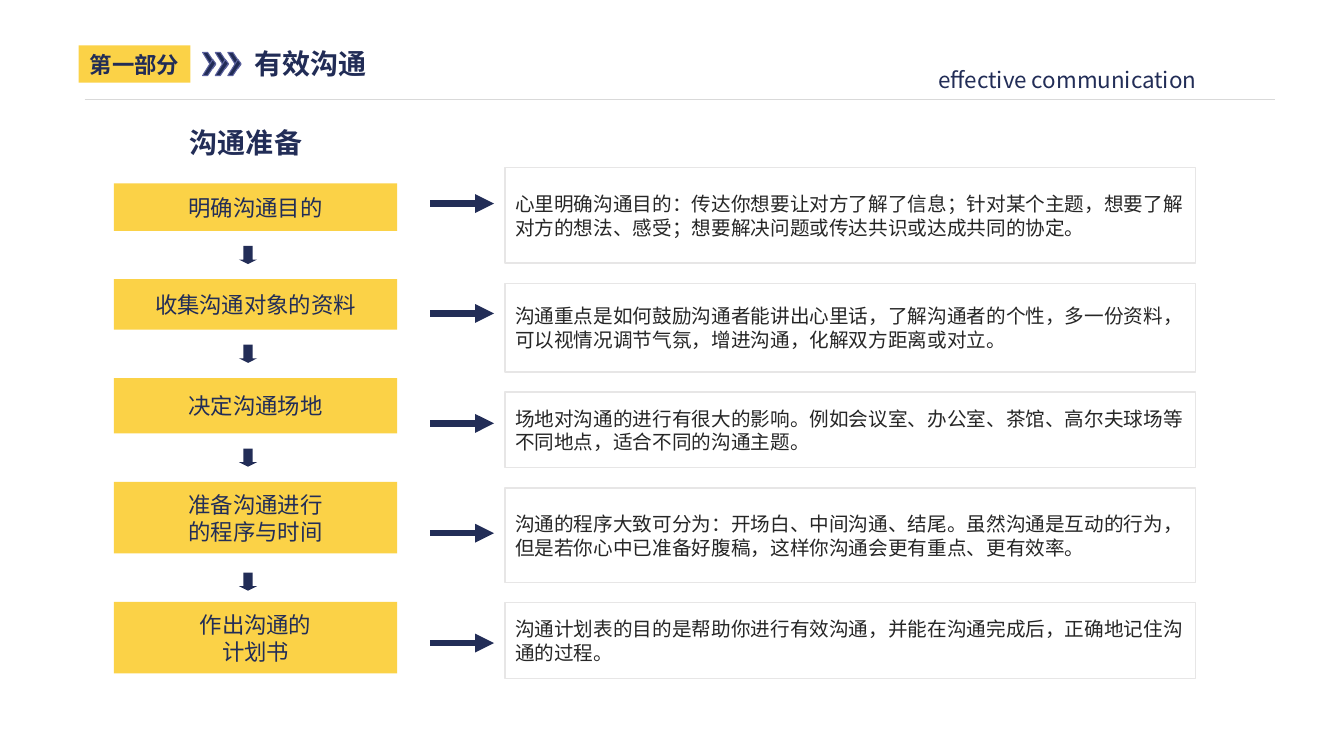
from lxml import etree
from pptx import Presentation
from pptx.dml.color import RGBColor
from pptx.enum.shapes import MSO_CONNECTOR, MSO_SHAPE
from pptx.enum.text import MSO_ANCHOR, PP_ALIGN
from pptx.oxml.ns import qn
from pptx.util import Inches, Pt

RECTANGLE, DOWN_ARROW = MSO_SHAPE.RECTANGLE, MSO_SHAPE.DOWN_ARROW
STRAIGHT = MSO_CONNECTOR.STRAIGHT
MIDDLE = MSO_ANCHOR.MIDDLE
LEFT, CENTER = PP_ALIGN.LEFT, PP_ALIGN.CENTER

FONT = "Noto Sans CJK SC"
LINE_HEIGHT = 1.22
COLORS = {
    "navy": "222D57",
    "header": "212C56",
    "chevron_edge": "5C629E",
    "yellow": "FBD247",
    "white": "FFFFFF",
    "border": "E7E6E6",
    "rule": "D9D9D9",
    "body": "262626",
}

# Step lines, step height, space above the arrow to the next step
STEPS = [
    (["明确沟通目的"], 0.47, 0.15),
    (["收集沟通对象的资料"], 0.5, 0.15),
    (["决定沟通场地"], 0.55, 0.15),
    (["准备沟通进行", "的程序与时间"], 0.71, 0.19),
    (["作出沟通的", "计划书"], 0.71, None),
]
# Explanation, box height
DETAILS = [
    ("心里明确沟通目的：传达你想要让对方了解了信息；针对某个主题，想要了解"
     "对方的想法、感受；想要解决问题或传达共识或达成共同的协定。", 0.95),
    ("沟通重点是如何鼓励沟通者能讲出心里话，了解沟通者的个性，多一份资料，"
     "可以视情况调节气氛，增进沟通，化解双方距离或对立。", 0.88),
    ("场地对沟通的进行有很大的影响。例如会议室、办公室、茶馆、高尔夫球场等"
     "不同地点，适合不同的沟通主题。", 0.75),
    ("沟通的程序大致可分为：开场白、中间沟通、结尾。虽然沟通是互动的行为，"
     "但是若你心中已准备好腹稿，这样你沟通会更有重点、更有效率。", 0.94),
    ("沟通计划表的目的是帮助你进行有效沟通，并能在沟通完成后，正确地记住沟"
     "通的过程。", 0.75),
]


def color(name):
    return RGBColor.from_string(COLORS[name])


def write(shape, lines, size, ink, align=LEFT, bold=False, wrap=True):
    frame = shape.text_frame
    frame.word_wrap = wrap
    frame.vertical_anchor = MIDDLE
    frame.margin_left = frame.margin_right = Inches(0.1)
    frame.margin_top = frame.margin_bottom = Inches(0.05)
    for index, line in enumerate(lines):
        para = frame.add_paragraph() if index else frame.paragraphs[0]
        para.alignment = align
        para.line_spacing = Pt(size * LINE_HEIGHT)
        span = para.add_run()
        span.text = line
        span.font.size = Pt(size)
        span.font.bold = bold
        span.font.name = FONT
        span.font.color.rgb = color(ink)
        east_asian = etree.SubElement(span.font._element, qn("a:ea"))
        east_asian.set("typeface", FONT)


def paint(shape, fill, edge=None, width=1):
    shape.shadow.inherit = False
    shape.fill.solid()
    shape.fill.fore_color.rgb = color(fill)
    if edge:
        shape.line.color.rgb = color(edge)
        shape.line.width = Pt(width)
    else:
        shape.line.fill.background()


def add_box(page, kind, left, top, width, height, fill, edge=None):
    box = page.shapes.add_shape(kind, Inches(left), Inches(top),
                                Inches(width), Inches(height))
    paint(box, fill, edge)
    return box


def add_text(page, left, top, width, height, *text, **style):
    box = page.shapes.add_textbox(Inches(left), Inches(top),
                                  Inches(width), Inches(height))
    write(box, *text, **style)


def add_line(page, left, right, y, ink, width, arrow=False):
    line = page.shapes.add_connector(STRAIGHT, Inches(left), Inches(y),
                                     Inches(right), Inches(y))
    line.line.color.rgb = color(ink)
    line.line.width = Pt(width)
    if arrow:
        head = etree.SubElement(line.line._get_or_add_ln(), qn("a:tailEnd"))
        head.set("type", "triangle")
    etree.SubElement(line._element.spPr, qn("a:effectLst"))


def add_chevron(page, left, top):
    """Draw one chevron from two mirrored, overlapping strokes."""
    height = 0.23
    stroke = [(0, 0), (0.1, 0.16), (0.13, 0.12), (0.05, 0)]
    for mirrored in (False, True):
        points = [(Inches(left + x), Inches(top + (height - y if mirrored else y)))
                  for x, y in stroke]
        builder = page.shapes.build_freeform(*points[0])
        builder.add_line_segments(points[1:], close=True)
        paint(builder.convert_to_shape(), "header", "chevron_edge", 0.75)


def add_header(page, left, top, width):
    title = page.shapes.title
    title.left, title.top = Inches(left + 1.64), Inches(top)
    title.width, title.height = Inches(1.78), Inches(0.44)
    write(title, ["有效沟通"], 20, "header", bold=True)
    tag = add_box(page, RECTANGLE, left, top + 0.04, 1.11, 0.37, "yellow")
    write(tag, ["第一部分"], 16, "header", align=CENTER, bold=True)
    for index in range(3):
        add_chevron(page, left + 1.23 + index * 0.125, top + 0.11)
    add_line(page, left + 0.06, left + width, top + 0.58, "rule", 0.5)
    add_text(page, left + 8.43, top + 0.19, 3.26, 0.37,
             ["effective communication"], 16, "navy")


def add_steps(page, left, top, width):
    gap, arrow_size = 0.48, 0.18
    add_text(page, left, top - 0.63, 2.62, 0.44,
             ["沟通准备"], 20, "navy", align=CENTER, bold=True)
    for lines, height, arrow_space in STEPS:
        step = add_box(page, RECTANGLE, left, top, width, height, "yellow")
        write(step, lines, 16, "navy", align=CENTER, wrap=False)
        top += height
        if arrow_space is not None:
            arrow = add_box(page, DOWN_ARROW, left + 1.24, top + arrow_space,
                            arrow_size, arrow_size, "navy")
            arrow.adjustments[1] = 0.25
        top += gap


def add_link_arrows(page, left, top, width):
    pitch = 1.09
    for index in range(len(STEPS)):
        add_line(page, left, left + width, top + index * pitch, "navy", 4.5, arrow=True)


def add_details(page, left, top, width):
    gap = 0.2
    for text, height in DETAILS:
        box = add_box(page, RECTANGLE, left, top, width, height, "white", "border")
        write(box, [text], 14, "body")
        top += height + gap


def main():
    deck = Presentation()
    deck.slide_width, deck.slide_height = Inches(13.33), Inches(7.5)
    title_only = deck.slide_layouts[5]
    page = deck.slides.add_slide(title_only)
    add_header(page, 0.78, 0.41, 11.87)
    add_steps(page, 1.13, 1.82, 2.81)
    add_link_arrows(page, 4.27, 2.02, 0.63)
    add_details(page, 5.01, 1.66, 6.85)
    deck.save("out.pptx")


if __name__ == "__main__":
    main()
